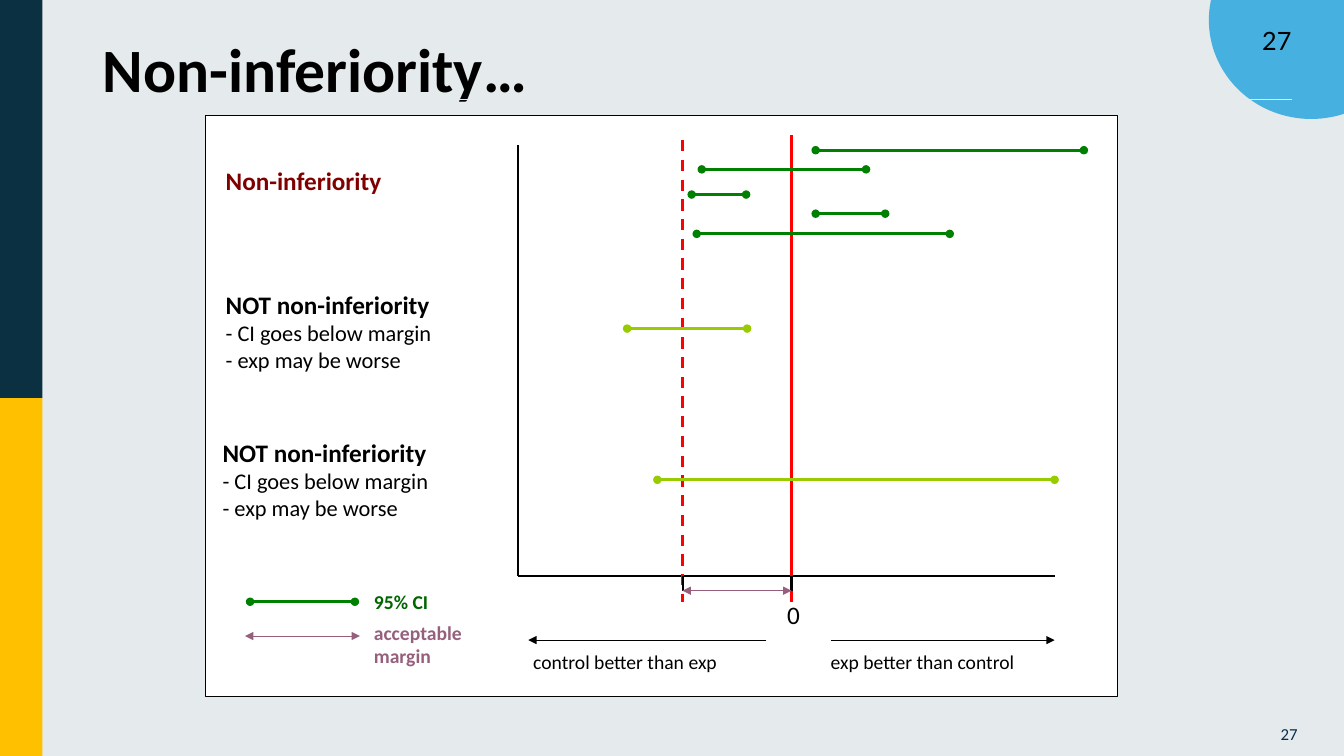
from dataclasses import dataclass
from typing import Optional

from lxml.etree import SubElement
from pptx import Presentation
from pptx.dml.color import RGBColor
from pptx.enum.dml import MSO_LINE
from pptx.enum.shapes import MSO_CONNECTOR, MSO_SHAPE
from pptx.enum.text import MSO_ANCHOR, MSO_AUTO_SIZE, PP_ALIGN
from pptx.oxml.ns import qn
from pptx.slide import Slide
from pptx.util import Inches, Length, Pt

BACKGROUND = RGBColor(0xE5, 0xEA, 0xEC)
SKY = RGBColor(0x46, 0xB1, 0xE1)
NAVY = RGBColor(0x0B, 0x30, 0x41)
AMBER = RGBColor(0xFF, 0xC0, 0x00)
PALE = RGBColor(0xE8, 0xE8, 0xE8)
WHITE = RGBColor(0xFF, 0xFF, 0xFF)
BLACK = RGBColor(0x00, 0x00, 0x00)
RED = RGBColor(0xFF, 0x00, 0x00)
MAROON = RGBColor(0x80, 0x00, 0x00)
GREEN = RGBColor(0x00, 0x80, 0x00)
DARK_GREEN = RGBColor(0x00, 0x66, 0x00)
LIME = RGBColor(0x99, 0xCC, 0x00)
MAUVE = RGBColor(0x96, 0x60, 0x7D)
FOOTER_BLUE = RGBColor(0x0A, 0x2E, 0x4F)

CELLS_PER_INCH = 10
AXIS_LEFT, AXIS_RIGHT, AXIS_ROW = 51.4, 104.6, 57.1
MARGIN_COLUMN, ZERO_COLUMN = 67.7, 78.5
TICK_ROW, LINE_END_ROW = 58.6, 59.7
DIRECTION_ROW, MARGIN_KEY_ROW = 63.5, 63.1


@dataclass(frozen=True)
class Area:
    left: float
    top: float
    width: float
    height: float


@dataclass(frozen=True)
class Block:
    area: Area
    fill: RGBColor
    outline: Optional[RGBColor] = None
    weight: float = 0.75
    kind: MSO_SHAPE = MSO_SHAPE.RECTANGLE


@dataclass(frozen=True)
class Segment:
    start: tuple[float, float]
    end: tuple[float, float]
    color: RGBColor
    weight: float
    head: str = ""
    tail: str = ""
    dashed: bool = False


@dataclass(frozen=True)
class Line:
    text: str
    size: float
    bold: bool = False


@dataclass(frozen=True)
class Label:
    area: Area
    lines: tuple[Line, ...]
    color: RGBColor
    font: str = "Calibri"
    alignment: PP_ALIGN = PP_ALIGN.LEFT
    inset: bool = True


def cells(count: float) -> Length:
    return Inches(count / CELLS_PER_INCH)


def frame(area: Area) -> tuple[Length, Length, Length, Length]:
    return cells(area.left), cells(area.top), cells(area.width), cells(area.height)


def interval(low: float, high: float, row: float, color: RGBColor = GREEN) -> Segment:
    return Segment((low, row), (high, row), color, 2, "oval", "oval")


def margin_arrow(left: float, right: float, row: float) -> Segment:
    return Segment((left, row), (right, row), MAUVE, 0.75, "triangle", "triangle")


def verdict(left: float, top: float) -> Label:
    lines = (
        Line("NOT non-inferiority", 18, True),
        Line("- CI goes below margin", 16),
        Line("- exp may be worse", 16),
    )
    return Label(Area(left, top, 30, 9.4), lines, BLACK)


BLOCKS = (
    Block(Area(120, -7.7, 20.1, 19.4), SKY, SKY, 1.5, MSO_SHAPE.OVAL),
    Block(Area(0, 0, 4.2, 39.5), NAVY),
    Block(Area(0, 39.5, 4.2, 35.5), AMBER),
    Block(Area(20.4, 11.5, 90.4, 57.6), WHITE, BLACK),
)

HEADER_RULE = Segment((5.2, 9.9), (128.1, 9.9), PALE, 1)

SEGMENTS = (
    Segment((AXIS_LEFT, 14.4), (AXIS_LEFT, AXIS_ROW), BLACK, 1.5),
    Segment((AXIS_LEFT, AXIS_ROW), (AXIS_RIGHT, AXIS_ROW), BLACK, 1.5),
    Segment((ZERO_COLUMN, 13.4), (ZERO_COLUMN, LINE_END_ROW), RED, 2),
    Segment((MARGIN_COLUMN, 13.9), (MARGIN_COLUMN, LINE_END_ROW), RED, 2, dashed=True),
    Segment((ZERO_COLUMN, AXIS_ROW), (ZERO_COLUMN, TICK_ROW), BLACK, 1.5),
    Segment((MARGIN_COLUMN, AXIS_ROW), (MARGIN_COLUMN, TICK_ROW), BLACK, 1.5),
    Segment((76, DIRECTION_ROW), (52.4, DIRECTION_ROW), BLACK, 0.75, tail="triangle"),
    Segment((82.4, DIRECTION_ROW), (AXIS_RIGHT, DIRECTION_ROW), BLACK, 0.75, tail="triangle"),
    margin_arrow(MARGIN_COLUMN, ZERO_COLUMN, TICK_ROW),
    margin_arrow(24.3, 35.7, MARGIN_KEY_ROW),
    interval(80.9, 107.5, 14.9),
    interval(69.6, 85.9, 16.8),
    interval(68.6, 74, 19.3),
    interval(80.9, 87.8, 21.2),
    interval(69.1, 94.2, 23.2),
    interval(62.2, 74.1, 32.6, LIME),
    interval(65.2, AXIS_RIGHT, 47.6, LIME),
    interval(24.8, 35.2, LINE_END_ROW),
)

LABELS = (
    Label(Area(124.2, 2, 5, 4), (Line("27", 18),), BLACK, "Lato"),
    Label(Area(21.4, 15.9, 28.5, 4), (Line("Non-inferiority", 18, True),), MAROON),
    verdict(21.4, 28.2),
    verdict(21.1, 42.9),
    Label(Area(77, 59, 3.4, 4), (Line("0", 18),), BLACK, alignment=PP_ALIGN.CENTER),
    Label(Area(81.4, 64, 28.6, 3.3), (Line("exp better than control", 14),), BLACK),
    Label(Area(51.9, 64, 27.1, 3.3), (Line("control better than exp", 14),), BLACK),
    Label(Area(36.1, 58, 12.8, 3.3), (Line("95% CI", 14, True),), DARK_GREEN),
    Label(Area(36.1, 61.1, 15.7, 5.7),
          (Line("acceptable", 14, True), Line("margin", 14, True)), MAUVE),
    Label(Area(121.7, 71.8, 7, 3.2), (Line("27", 12),), FOOTER_BLUE,
          alignment=PP_ALIGN.RIGHT, inset=False),
)


def draw_block(slide: Slide, block: Block) -> None:
    shape = slide.shapes.add_shape(block.kind, *frame(block.area))
    shape.shadow.inherit = False
    shape.fill.solid()
    shape.fill.fore_color.rgb = block.fill
    if block.outline is None:
        shape.line.fill.background()
    else:
        shape.line.color.rgb = block.outline
        shape.line.width = Pt(block.weight)


def draw_segment(slide: Slide, segment: Segment) -> None:
    points = [cells(value) for value in (*segment.start, *segment.end)]
    connector = slide.shapes.add_connector(MSO_CONNECTOR.STRAIGHT, *points)
    connector.line.color.rgb = segment.color
    connector.line.width = Pt(segment.weight)
    if segment.dashed:
        connector.line.dash_style = MSO_LINE.DASH
    properties = connector._element.spPr
    outline = properties.find(qn("a:ln"))
    for tag, ending in (("a:headEnd", segment.head), ("a:tailEnd", segment.tail)):
        if ending:
            SubElement(outline, qn(tag), type=ending)
    SubElement(properties, qn("a:effectLst"))


def draw_label(slide: Slide, label: Label) -> None:
    text_frame = slide.shapes.add_textbox(*frame(label.area)).text_frame
    text_frame.word_wrap = True
    if not label.inset:
        text_frame.margin_top = text_frame.margin_right = text_frame.margin_bottom = 0
    paragraph = text_frame.paragraphs[0]
    paragraph.alignment = label.alignment
    for index, line in enumerate(label.lines):
        if index:
            paragraph.add_line_break()
        run = paragraph.add_run()
        run.text = line.text
        run.font.name = label.font
        run.font.size = Pt(line.size)
        run.font.bold = line.bold
        run.font.color.rgb = label.color


def write_title(slide: Slide, text: str) -> None:
    title = slide.shapes.title
    title.left, title.top, title.width, title.height = frame(Area(9.2, 2, 115, 10.3))
    text_frame = title.text_frame
    text_frame.auto_size = MSO_AUTO_SIZE.NONE
    text_frame.vertical_anchor = MSO_ANCHOR.MIDDLE
    paragraph = text_frame.paragraphs[0]
    paragraph.alignment = PP_ALIGN.LEFT
    paragraph.line_spacing = 0.9
    run = paragraph.add_run()
    run.text = text
    run.font.name = "Calibri"
    run.font.size = Pt(44)
    run.font.bold = True
    run.font.color.rgb = BLACK


def main() -> None:
    presentation = Presentation()
    presentation.slide_width, presentation.slide_height = Inches(13.33), Inches(7.5)
    slide = presentation.slides.add_slide(presentation.slide_layouts.get_by_name("Title Only"))
    slide.background.fill.solid()
    slide.background.fill.fore_color.rgb = BACKGROUND
    write_title(slide, "Non-inferiority…")
    for block in BLOCKS:
        draw_block(slide, block)
    for segment in (HEADER_RULE, *SEGMENTS):
        draw_segment(slide, segment)
    for label in LABELS:
        draw_label(slide, label)
    presentation.save("out.pptx")


if __name__ == "__main__":
    main()
